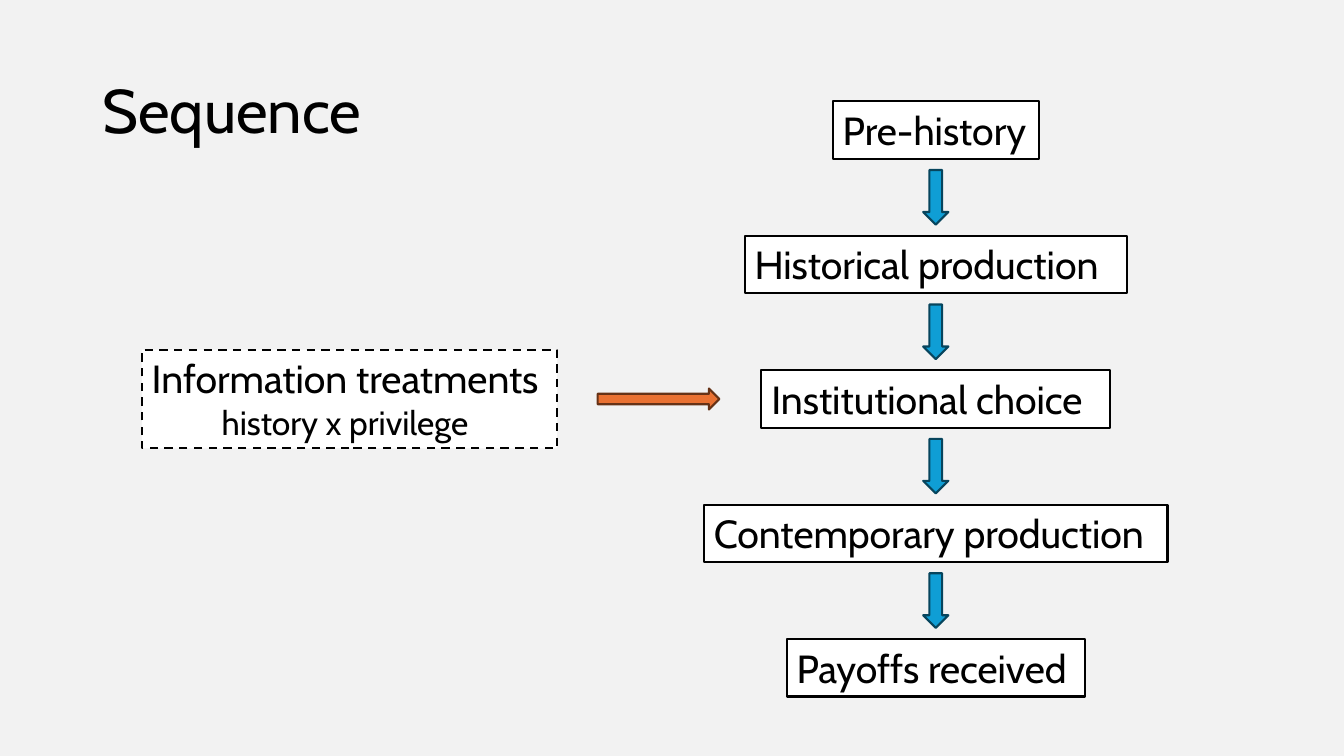
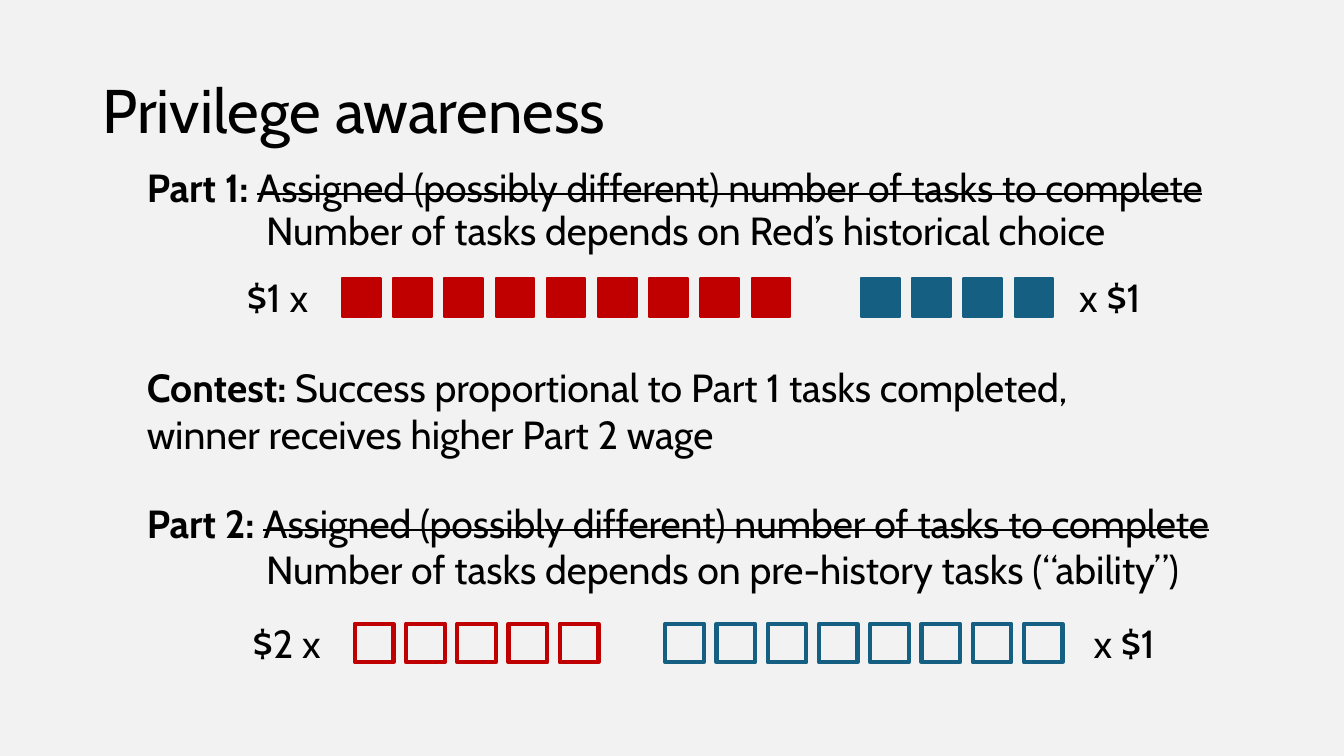
from dataclasses import dataclass

from pptx import Presentation
from pptx.dml.color import RGBColor
from pptx.enum.dml import MSO_LINE_DASH_STYLE as Dash
from pptx.enum.shapes import MSO_SHAPE as Preset
from pptx.enum.text import MSO_ANCHOR as Anchor
from pptx.enum.text import MSO_AUTO_SIZE as AutoSize
from pptx.enum.text import PP_ALIGN as Align
from pptx.util import Inches, Pt


@dataclass(frozen=True)
class Theme:
    font: str = "Cabin"
    ink: str = "000000"
    page: str = "F2F2F2"
    paper: str = "FFFFFF"
    red: str = "C00000"
    blue: str = "156082"
    flow: tuple = ("0F9ED5", "07455D")
    treatment: tuple = ("E97132", "663216")
    title_size: int = 44
    body_size: int = 28
    note_size: int = 24
    line: float = 1.5
    thick_line: float = 3
    columns: int = 32
    rows: int = 18
    line_height: float = 1.37
    tile: float = 0.92
    pitch: float = 1.22


@dataclass(frozen=True)
class Run:
    text: str
    size: int = Theme.body_size
    bold: bool = False
    struck: bool = False


class Board:
    """Draws styled elements on the current slide, measured in grid columns and rows."""

    def __init__(self, theme):
        self.theme = theme
        self.deck = Presentation()
        self.deck.slide_width, self.deck.slide_height = Inches(13.333), Inches(7.5)
        self.fill(self.deck.slide_master.background, theme.page)
        self.slide = None

    def frame(self, left, top, width, height):
        column = self.deck.slide_width / self.theme.columns
        row = self.deck.slide_height / self.theme.rows
        return [round(n) for n in (left * column, top * row, width * column, height * row)]

    def fill(self, target, color):
        target.fill.solid()
        target.fill.fore_color.rgb = RGBColor.from_string(color)

    def outline(self, shape, color, weight):
        shape.line.color.rgb = RGBColor.from_string(color)
        shape.line.width = Pt(weight)

    def page(self, title):
        self.slide = self.deck.slides.add_slide(self.deck.slide_layouts[6])
        box = self.text(2.2, 0.96, 27.6, 3.48, [[Run(title, self.theme.title_size)]])
        box.text_frame.vertical_anchor = Anchor.MIDDLE
        box.text_frame.paragraphs[0].line_spacing = 0.9

    def text(self, left, top, width, height, paragraphs, wrap=True):
        box = self.slide.shapes.add_textbox(*self.frame(left, top, width, height))
        frame = box.text_frame
        frame.word_wrap = wrap
        frame.auto_size = AutoSize.NONE if wrap else AutoSize.SHAPE_TO_FIT_TEXT
        for index, runs in enumerate(paragraphs):
            para = frame.add_paragraph() if index else frame.paragraphs[0]
            for run in runs:
                if run is None:
                    para.add_line_break()
                else:
                    self.span(para, run)
        return box

    def span(self, para, run):
        span = para.add_run()
        span.text = run.text
        font = span.font
        font.name, font.size, font.bold = self.theme.font, Pt(run.size), run.bold
        font.color.rgb = RGBColor.from_string(self.theme.ink)
        if run.struck:
            span._r.get_or_add_rPr().set("strike", "sngStrike")

    def label(self, left, middle, text):
        height = self.theme.line_height
        self.text(left, middle - height / 2, 2.11, height, [[Run(text)]], wrap=False)

    def box(self, center, middle, width, height, paragraphs):
        box = self.text(center - width / 2, middle - height / 2, width, height,
                        paragraphs, wrap=False)
        self.fill(box, self.theme.paper)
        self.outline(box, self.theme.ink, self.theme.line)
        return box

    def arrow(self, preset, center, middle, width, height, colors):
        arrow = self.slide.shapes.add_shape(
            preset, *self.frame(center - width / 2, middle - height / 2, width, height))
        arrow.shadow.inherit = False
        self.fill(arrow, colors[0])
        self.outline(arrow, colors[1], self.theme.line)

    def tiles(self, left, middle, count, color, filled):
        size = self.theme.tile
        group = self.slide.shapes.add_group_shape()
        for index in range(count):
            tile = group.shapes.add_shape(Preset.RECTANGLE, *self.frame(
                left + index * self.theme.pitch, middle - size / 2, size, size))
            tile.shadow.inherit = False
            if filled:
                self.fill(tile, color)
            else:
                tile.fill.background()
            self.outline(tile, color, self.theme.line if filled else self.theme.thick_line)


def draw_sequence(board):
    theme = board.theme
    board.page("Sequence")
    center, first, step = 22.28, 3.1, 3.2
    stages = [("Pre-history", 4.9), ("Historical production", 9.1),
              ("Institutional choice", 8.3), ("Contemporary production", 11.04),
              ("Payoffs received", 7.1)]
    for index, (name, width) in enumerate(stages):
        middle = first + index * step
        board.box(center, middle, width, theme.line_height, [[Run(name)]])
        if index:
            board.arrow(Preset.DOWN_ARROW, center, middle - step / 2, 0.6, 1.3, theme.flow)

    choice = first + 2 * step
    treatments = board.box(8.32, choice, 9.89, 2.35, [
        [Run("Information treatments")],
        [Run("history x privilege", theme.note_size)]])
    treatments.line.dash_style = Dash.DASH
    treatments.text_frame.paragraphs[1].alignment = Align.CENTER
    board.arrow(Preset.RIGHT_ARROW, 15.68, choice, 2.9, 0.5, theme.treatment)


def draw_privilege(board):
    theme = board.theme
    board.page("Privilege awareness")
    left, width, height = 3.26, 27.6, theme.line_height
    parts = [
        ("Part 1: ", 3.77, "Number of tasks depends on Red’s historical choice", 4.8),
        ("Part 2: ", 11.78, "Number of tasks depends on pre-history tasks (“ability”)", 12.86),
    ]
    for heading, top, rule, rule_top in parts:
        board.text(left, top, width, height, [[
            Run(heading, bold=True),
            Run("Assigned (possibly different) number of tasks to complete", struck=True)]])
        board.text(6.1, rule_top, 24.05, height, [[Run(rule)]])
    board.text(left, 8.54, width, 2.5, [[
        Run("Contest: ", bold=True),
        Run("Success proportional to Part 1 tasks completed,"),
        None,
        Run("winner receives higher Part 2 wage")]])

    wages = [
        (7.08, True, (5.64, "$1 x"), (8.14, 9), (20.5, 4), (25.46, "x $1")),
        (15.31, False, (5.78, "$2 x"), (8.45, 5), (15.84, 8), (25.8, "x $1")),
    ]
    for middle, filled, red_wage, red_tasks, blue_tasks, blue_wage in wages:
        for wage_left, wage in (red_wage, blue_wage):
            board.label(wage_left, middle, wage)
        for (tasks_left, count), color in ((red_tasks, theme.red), (blue_tasks, theme.blue)):
            board.tiles(tasks_left, middle, count, color, filled)


def main():
    board = Board(Theme())
    draw_sequence(board)
    draw_privilege(board)
    board.deck.save("out.pptx")


if __name__ == "__main__":
    main()
